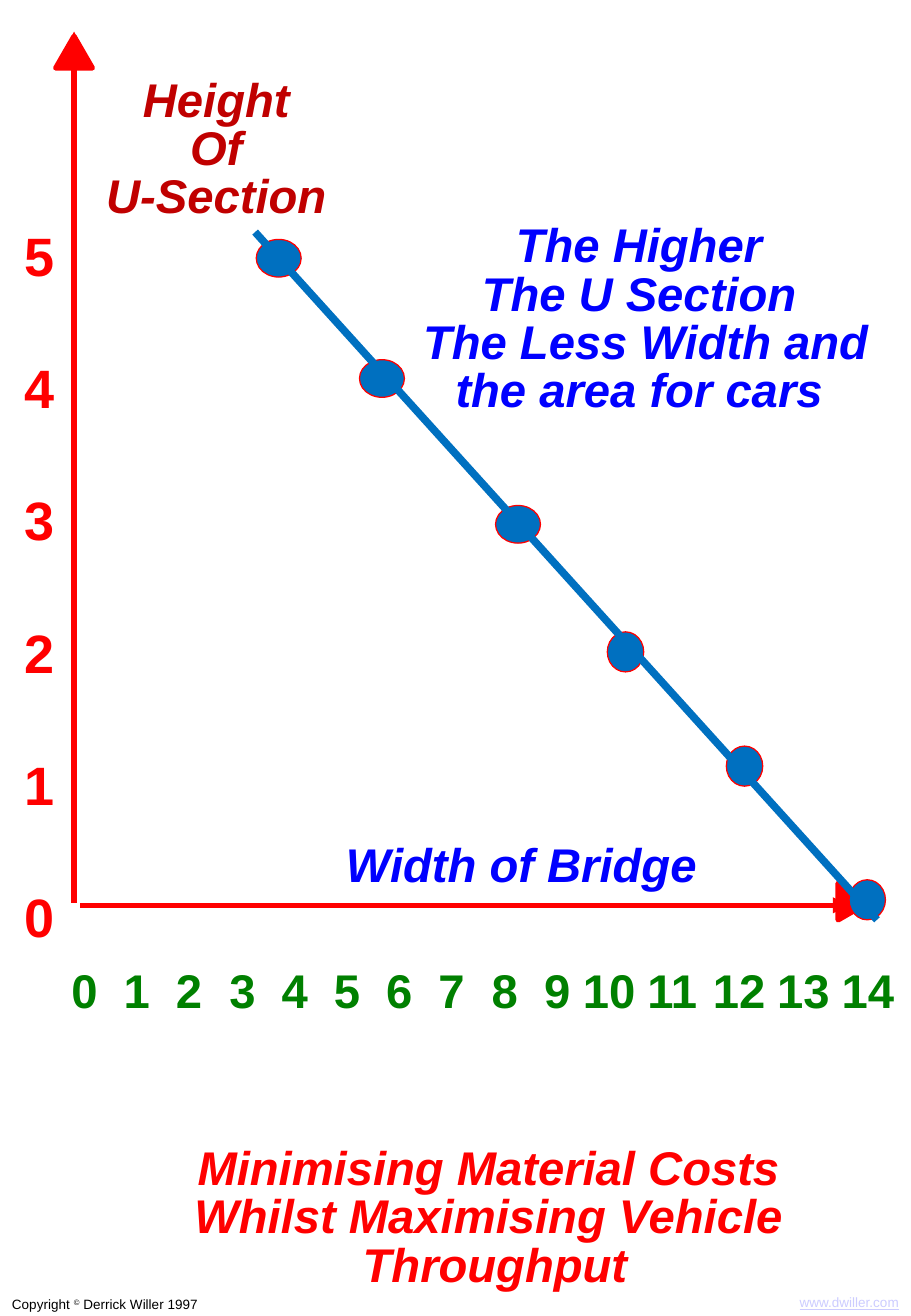
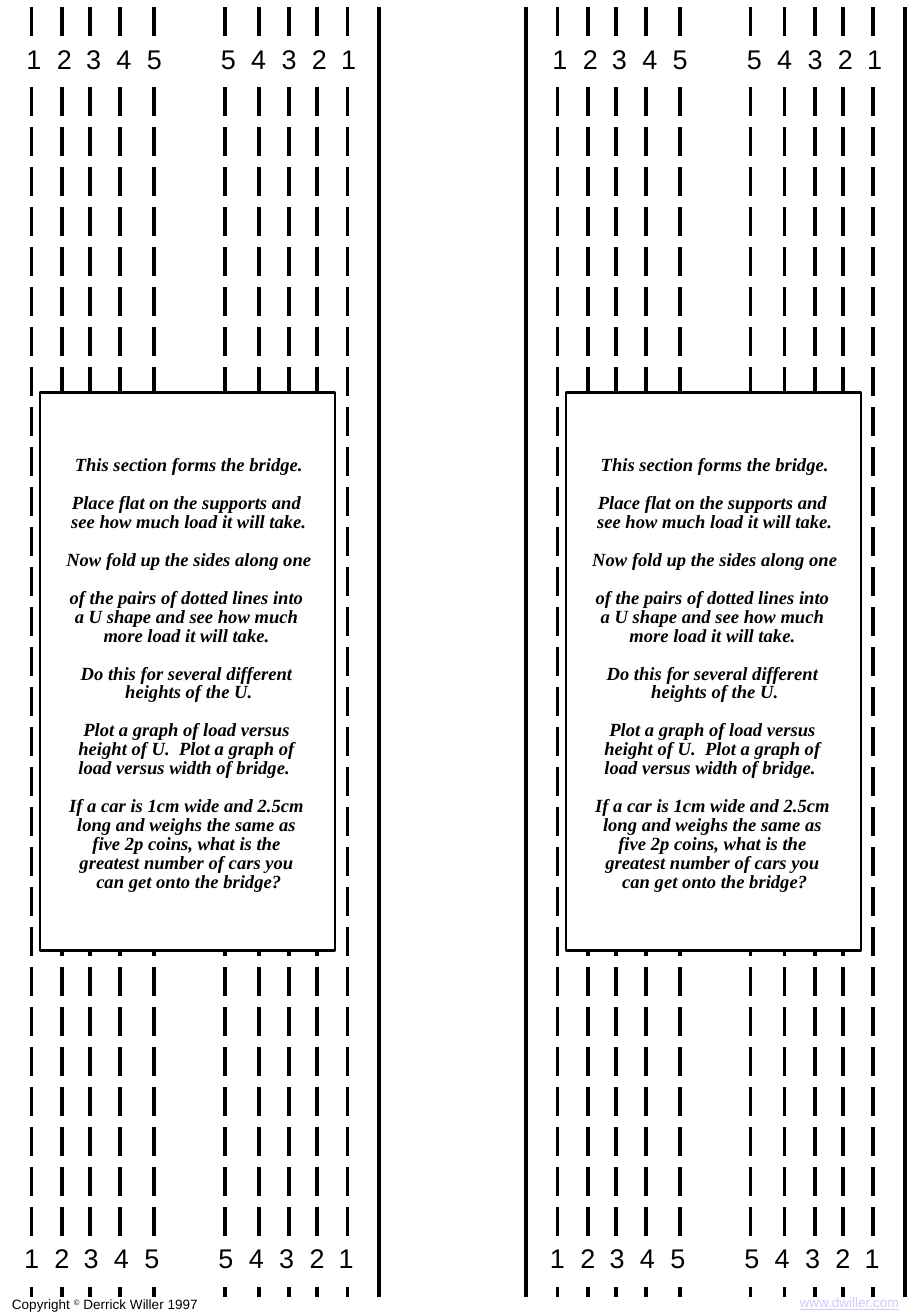
from dataclasses import dataclass

from lxml.etree import SubElement
from pptx import Presentation
from pptx.dml.color import RGBColor
from pptx.enum.dml import MSO_LINE
from pptx.enum.shapes import MSO_CONNECTOR, MSO_SHAPE as SHAPE
from pptx.enum.text import MSO_ANCHOR as ANCHOR, PP_ALIGN as ALIGN
from pptx.oxml.ns import qn
from pptx.util import Pt

SCALE = 9144


@dataclass(frozen=True)
class Theme:
    black: str = "000000"
    white: str = "FFFFFF"
    red: str = "FF0000"
    dark_red: str = "C00000"
    blue: str = "0000FF"
    green: str = "008000"
    curve: str = "0070C0"
    link: str = "CCCCFF"
    sans: str = "Arial"
    serif: str = "Times New Roman"
    small: int = 8
    body: int = 11
    fold: int = 16
    label: int = 28
    scale: int = 32
    tight: float = 0.85


THEME = Theme()

COPYRIGHT = ("Copyright ", "©", " Derrick Willer 1997")
SITE = "www.dwiller.com"

GUIDE = [
    ["This section forms the bridge."],
    ["Place flat on the supports and ", "see how much load it will take."],
    ["Now fold up the sides along one "],
    ["of the pairs of dotted lines into ", "a U shape and see how much ",
     "more load it will take. "],
    ["Do this for several different ", "heights of the U."],
    ["Plot a graph of load versus ", "height of U.  Plot a graph of ",
     "load versus width of bridge.  "],
    ["If a car is 1cm wide and 2.5cm ", "long and weighs the same as ",
     "five 2p coins, what is the ", "greatest number of cars you ",
     "can get onto the bridge?"],
]

STRIP_WIDTH = 312
STRIP_PITCH = 433
FOLDS = [26, 51, 74, 99, 127]
FOLD_LABELS = [1, 2, 3, 4, 5, 5, 4, 3, 2, 1]
FOLD_TABS = [round(24.7 * n + (37 if n > 4 else 0)) for n in range(1, 10)]
WIDTH_TABS = [round(43.2 * n if n < 10 else 421 + 53.3 * (n - 10))
              for n in range(1, 15)]
MARKERS = [
    (699, 724, 30, 33), (598, 614, 30, 33), (408, 416, 37, 31),
    (500, 520, 30, 33), (296, 296, 37, 31), (211, 197, 37, 31),
]


def px(value):
    return int(value * SCALE)


def rgb(value):
    return RGBColor.from_string(value)


def add_span(para, text, size, color, font=THEME.sans, bold=False, italic=False):
    span = para.add_run()
    span.text = text
    span.font.name = font
    span.font.size = Pt(size)
    span.font.bold = bold
    span.font.italic = italic
    span.font.color.rgb = rgb(color)
    return span


def add_box(shapes, left, top, width, height, anchor=ANCHOR.TOP, wrap=False):
    box = shapes.add_textbox(px(left), px(top), px(width), px(height))
    box.text_frame.word_wrap = wrap
    box.text_frame.vertical_anchor = anchor
    return box


def add_text(shapes, place, paragraphs, align=ALIGN.LEFT, spacing=THEME.tight,
             gap=0, anchor=ANCHOR.MIDDLE, wrap=False, **style):
    frame = add_box(shapes, *place, anchor, wrap).text_frame
    for index, lines in enumerate(paragraphs):
        para = frame.add_paragraph() if index else frame.paragraphs[0]
        para.alignment = align
        para.line_spacing = spacing
        para.space_before = Pt(gap if index else 0)
        for number, line in enumerate(lines):
            if number:
                para.add_line_break()
            add_span(para, line, **style)


def add_label(shapes, place, lines, color, align=ALIGN.CENTER, wrap=False):
    add_text(shapes, place, [lines], align, wrap=wrap, size=THEME.label,
             color=color, bold=True, italic=True)


def add_tabbed(shapes, place, values, stops, spacing, anchor, **style):
    para = add_box(shapes, *place, anchor).text_frame.paragraphs[0]
    para.line_spacing = spacing
    tabs = SubElement(para._p.get_or_add_pPr(), qn("a:tabLst"))
    for stop in stops:
        SubElement(tabs, qn("a:tab"), pos=str(px(stop)), algn="l")
    add_span(para, "\t".join(str(value) for value in values), **style)


def add_shape(shapes, kind, left, top, width, height, fill, line=None, weight=0):
    shape = shapes.add_shape(kind, px(left), px(top), px(width), px(height))
    shape.shadow.inherit = False
    shape.fill.solid()
    shape.fill.fore_color.rgb = rgb(fill)
    if line:
        shape.line.color.rgb = rgb(line)
        shape.line.width = Pt(weight)
    else:
        shape.line.fill.background()
    return shape


def add_line(shapes, start, end, color, weight, dashed=False, arrow=False):
    line = shapes.add_connector(MSO_CONNECTOR.STRAIGHT,
                                *(px(value) for value in (*start, *end)))
    line.line.color.rgb = rgb(color)
    line.line.width = Pt(weight)
    if dashed:
        line.line.dash_style = MSO_LINE.LONG_DASH
    if arrow:
        SubElement(line.line._get_or_add_ln(), qn("a:tailEnd"), type="triangle")
    SubElement(line._element.spPr, qn("a:effectLst"))


def add_page(deck):
    page = deck.slides.add_slide(deck.slide_layouts[6])
    para = add_box(page.shapes, 0, 1062, 565, 24, wrap=True).text_frame.paragraphs[0]
    spans = [add_span(para, text, THEME.small, THEME.black) for text in COPYRIGHT]
    spans[1]._r.get_or_add_rPr().set("baseline", "30000")
    para = add_box(page.shapes, 616, 1060, 134, 24, wrap=True).text_frame.paragraphs[0]
    para.alignment = ALIGN.RIGHT
    add_span(para, SITE, THEME.small, THEME.link).font.underline = True
    return page.shapes


def add_graph(shapes):
    add_line(shapes, (61, 743), (61, 26), THEME.red, 3.2, arrow=True)
    add_line(shapes, (66, 745), (699, 745), THEME.red, 3.2, arrow=True)
    add_label(shapes, (77, 60, 202, 129), ["Height", "Of", "U-Section"],
              THEME.dark_red)
    add_label(shapes, (321, 179, 421, 170),
              ["The Higher ", "The U Section ",
               "The Less Width and the area for cars "], THEME.blue, wrap=True)
    add_label(shapes, (149, 939, 517, 129),
              ["Minimising Material Costs ", "Whilst Maximising Vehicle ",
               "Throughput"], THEME.red)
    for left, top, turn in [(46, 30, 0), (688, 729, 90)]:
        head = add_shape(shapes, SHAPE.ISOSCELES_TRIANGLE, left, top, 30, 26,
                         THEME.red, THEME.red, 3.2)
        head.rotation = turn
    add_label(shapes, (275, 689, 312, 50), ["Width of Bridge"], THEME.blue,
              ALIGN.LEFT)
    add_text(shapes, (10, 178, 45, 602), [[str(n)] for n in range(5, -1, -1)],
             spacing=1.0, gap=40, anchor=ANCHOR.TOP, size=THEME.scale,
             color=THEME.red, bold=True)
    add_tabbed(shapes, (49, 786, 728, 57), range(15), WIDTH_TABS, 1.0, ANCHOR.TOP,
               size=THEME.label, color=THEME.green, bold=True)
    for marker in MARKERS:
        add_shape(shapes, SHAPE.OVAL, *marker, THEME.curve, THEME.red, 0.75)
    add_line(shapes, (210, 191), (722, 757), THEME.curve, 4.5)


def add_strip(shapes, left, edges):
    strip = shapes.add_group_shape().shapes
    for edge in edges:
        add_line(strip, (left + edge, 6), (left + edge, 1067), THEME.black, 2.7)
    for fold in FOLDS + [STRIP_WIDTH - fold for fold in FOLDS]:
        add_line(strip, (left + fold, 6), (left + fold, 1067), THEME.black, 2.15,
                 dashed=True)
    add_shape(strip, SHAPE.RECTANGLE, left + 33, 323, 243, 459, THEME.white,
              THEME.black, 1.6)
    add_text(strip, (left + 43, 378, 225, 354), GUIDE, ALIGN.CENTER, gap=11.2,
             size=THEME.body, color=THEME.black, font=THEME.serif, bold=True,
             italic=True)
    for inset, top, width in [(19, 38, 281), (17, 1025, 286)]:
        add_shape(strip, SHAPE.RECTANGLE, left + inset, top, width, 29, THEME.white)
        add_tabbed(strip, (left + inset - 7, top - 4, 293, 33), FOLD_LABELS,
                   FOLD_TABS, THEME.tight, ANCHOR.MIDDLE, size=THEME.fold,
                   color=THEME.black)


def main():
    deck = Presentation()
    deck.slide_width = px(750)
    deck.slide_height = px(1083)
    add_graph(add_page(deck))
    template = add_page(deck)
    add_strip(template, STRIP_PITCH, [0, STRIP_WIDTH])
    add_strip(template, 0, [STRIP_WIDTH])
    deck.save("out.pptx")


if __name__ == "__main__":
    main()
